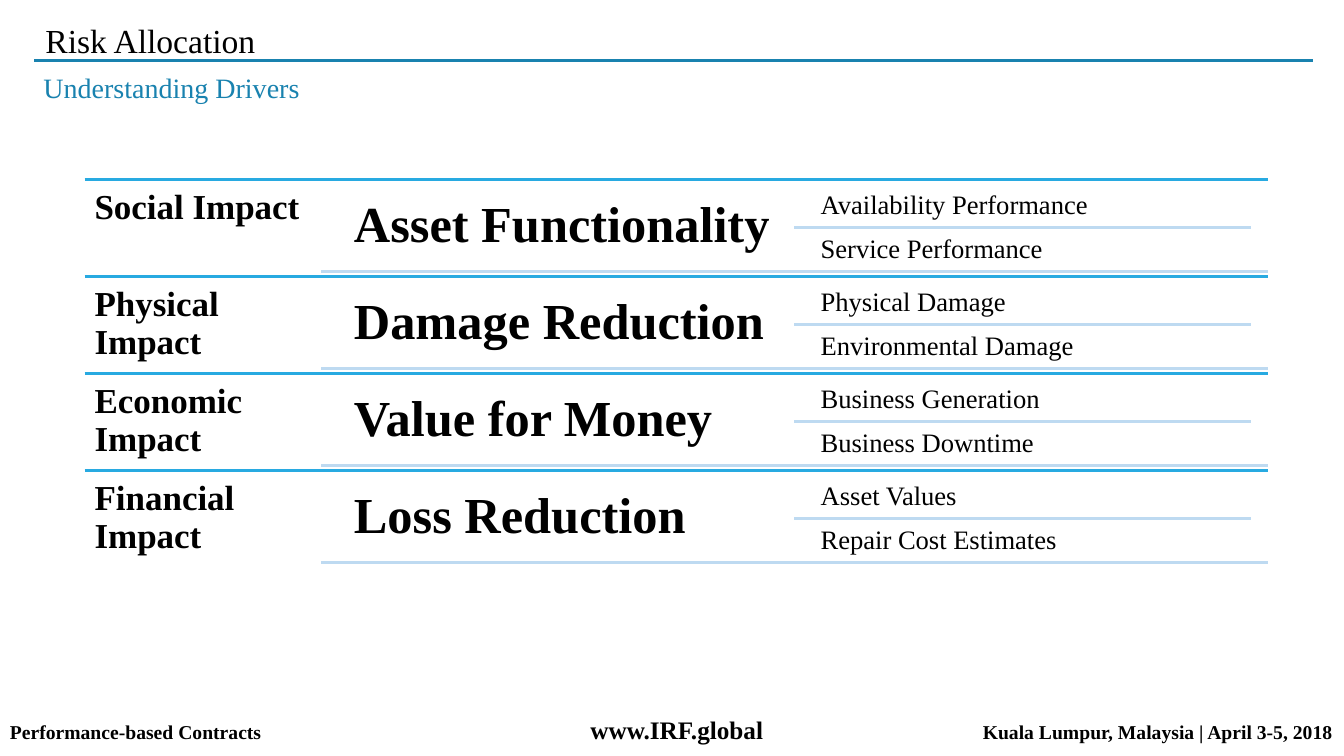
from dataclasses import dataclass

from lxml.etree import SubElement
from pptx import Presentation
from pptx.dml.color import RGBColor
from pptx.enum.shapes import MSO_CONNECTOR
from pptx.enum.text import MSO_ANCHOR, PP_ALIGN
from pptx.oxml.ns import qn
from pptx.util import Inches, Pt


@dataclass(frozen=True)
class Theme:
    font: str = "Times New Roman"
    text: RGBColor = RGBColor(0x00, 0x00, 0x00)
    accent: RGBColor = RGBColor(0x19, 0x82, 0xAF)
    row_rule: RGBColor = RGBColor(0x28, 0xAA, 0xE1)
    detail_rule: RGBColor = RGBColor(0xBE, 0xDA, 0xF1)
    title: int = 24
    subtitle: int = 20
    impact: int = 25
    driver: int = 36
    measure: int = 19
    footer: int = 14
    website: int = 18


THEME = Theme()

IMPACTS = [
    ("Social Impact", "Asset Functionality",
     ("Availability Performance", "Service Performance")),
    ("Physical Impact", "Damage Reduction",
     ("Physical Damage", "Environmental Damage")),
    ("Economic Impact", "Value for Money",
     ("Business Generation", "Business Downtime")),
    ("Financial Impact", "Loss Reduction",
     ("Asset Values", "Repair Cost Estimates")),
]


def style(paragraph, size, color=THEME.text, bold=False, spacing=None):
    font = paragraph.font
    font.name, font.size, font.bold = THEME.font, Pt(size), bold
    font.color.rgb = color
    if spacing:
        paragraph.line_spacing = spacing


def set_frame(frame, left=0.1, top=0.05, right=0.1, bottom=0.05,
              anchor=MSO_ANCHOR.TOP):
    frame.word_wrap = True
    frame.vertical_anchor = anchor
    frame.margin_left, frame.margin_top = Inches(left), Inches(top)
    frame.margin_right, frame.margin_bottom = Inches(right), Inches(bottom)


def add_text(slide, text, left, top, width, height, inset, size, bold=False):
    label = slide.shapes.add_textbox(
        Inches(left), Inches(top), Inches(width), Inches(height))
    set_frame(label.text_frame, inset, inset, inset, inset)
    paragraph = label.text_frame.paragraphs[0]
    paragraph.text = text
    style(paragraph, size, bold=bold, spacing=0.9)


def add_rule(slide, left, right, y, color, weight=2):
    rule = slide.shapes.add_connector(
        MSO_CONNECTOR.STRAIGHT, Inches(left), Inches(y), Inches(right), Inches(y))
    rule.line.color.rgb = color
    rule.line.width = Pt(weight)
    SubElement(rule._element.spPr, qn("a:effectLst"))


def add_heading(slide, left, top, width):
    title = slide.shapes.title
    title.left, title.top = Inches(left), Inches(top)
    title.width, title.height = Inches(8.74), Inches(0.53)
    title.text_frame.text = "Risk Allocation"
    set_frame(title.text_frame, top=0.08)
    paragraph = title.text_frame.paragraphs[0]
    paragraph.alignment = PP_ALIGN.LEFT
    style(paragraph, THEME.title, spacing=0.85)

    add_rule(slide, left - 0.01, left + width + 0.01, top + 0.42,
             THEME.accent, 1.5)

    subtitle = slide.shapes.add_textbox(
        Inches(left), Inches(top + 0.52), Inches(width), Inches(0.54))
    set_frame(subtitle.text_frame, left=0.08)
    paragraph = subtitle.text_frame.paragraphs[0]
    paragraph.text = "Understanding Drivers"
    style(paragraph, THEME.subtitle, THEME.accent, spacing=0.85)


def add_impact_row(slide, left, top, width, height, impact, driver, measures):
    right = left + width
    impact_width = width / 5
    driver_left, driver_width = left + 2.52, 4.52
    measure_left = driver_left + driver_width
    pad, measure_height = 0.04, 0.44

    add_rule(slide, left, right, top, THEME.row_rule)
    add_text(slide, impact, left, top, impact_width, height, 0.1,
             THEME.impact, bold=True)
    add_text(slide, driver, driver_left, top + pad, driver_width,
             2 * measure_height, 0.15, THEME.driver, bold=True)

    for index, measure in enumerate(measures):
        add_text(slide, measure, measure_left + 0.18,
                 top + pad + index * measure_height, right - measure_left - 0.18,
                 measure_height, 0.08, THEME.measure)
    add_rule(slide, measure_left, right - 0.17, top + pad + measure_height,
             THEME.detail_rule)
    add_rule(slide, left + impact_width, right, top + height - 0.05,
             THEME.detail_rule)


def add_impacts(slide, left, top, width, height):
    row_height = height / len(IMPACTS)
    for index, row in enumerate(IMPACTS):
        add_impact_row(slide, left, top + index * row_height, width,
                       row_height, *row)


def add_footer(slide, left, top, width, height):
    """Place the event line, with centre and right tab stops across the box."""
    footer = slide.shapes.add_textbox(
        Inches(left), Inches(top), Inches(width), Inches(height))
    set_frame(footer.text_frame, anchor=MSO_ANCHOR.BOTTOM)
    paragraph = footer.text_frame.paragraphs[0]
    tabs = SubElement(paragraph._p.get_or_add_pPr(), qn("a:tabLst"))
    for position, alignment in ((width / 2 - 0.05, "ctr"), (width - 0.21, "r")):
        SubElement(tabs, qn("a:tab"), pos=str(Inches(position)), algn=alignment)
    style(paragraph, THEME.footer, bold=True)
    paragraph.add_run().text = "Performance-based Contracts\t"
    website = paragraph.add_run()
    website.text = "www.IRF.global"
    website.font.size = Pt(THEME.website)
    paragraph.add_run().text = "\tKuala Lumpur, Malaysia | April 3-5, 2018"


def main():
    deck = Presentation()
    deck.slide_width, deck.slide_height = Inches(13.33), Inches(7.5)
    slide = deck.slides.add_slide(deck.slide_layouts.get_by_name("Title Only"))
    add_heading(slide, 0.35, 0.18, 12.66)
    add_impacts(slide, 0.84, 1.78, 11.74, 3.85)
    add_footer(slide, 0, 7, 13.33, 0.44)
    deck.save("out.pptx")


if __name__ == "__main__":
    main()
